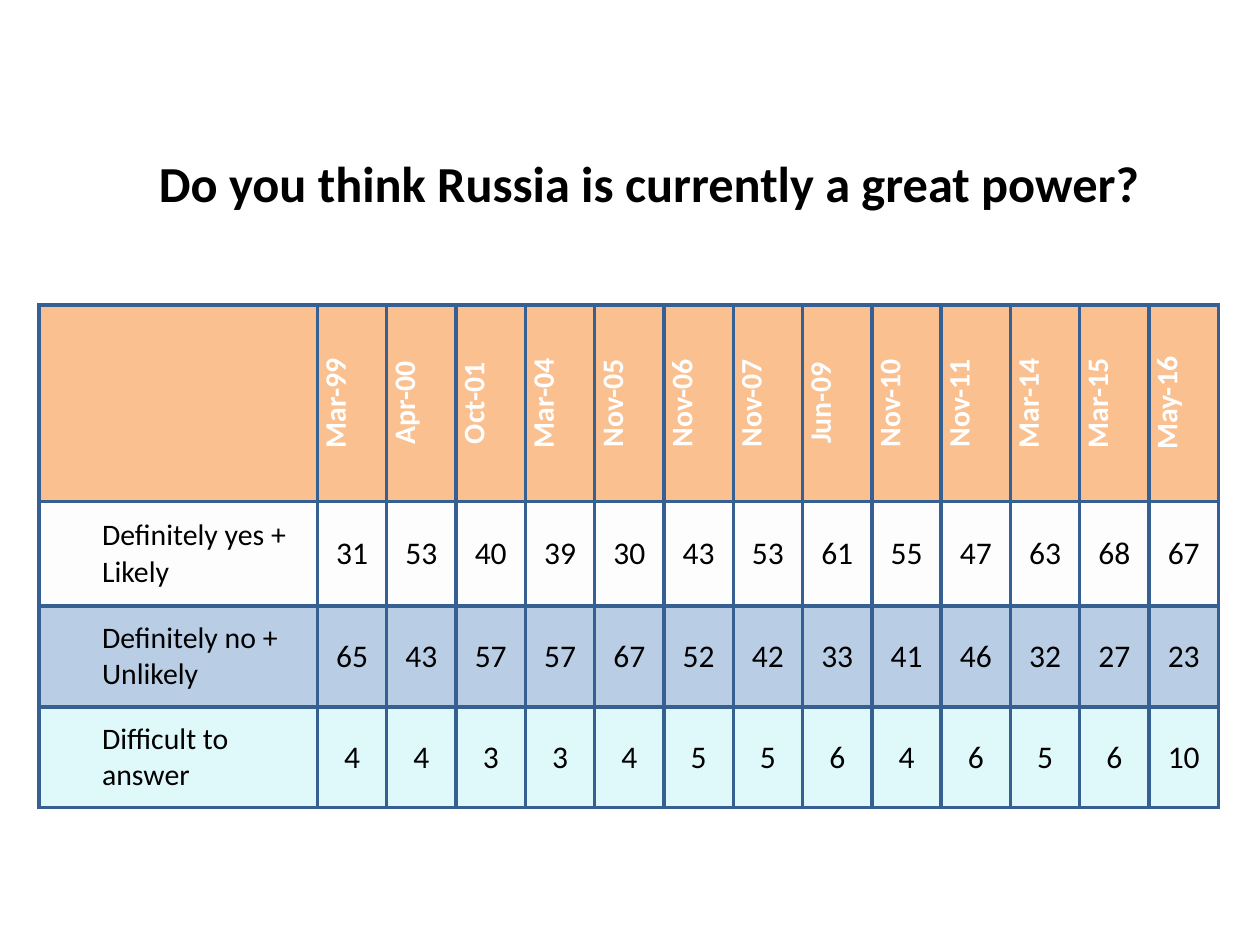
from dataclasses import dataclass

import pptx
import pptx.dml.color
import pptx.enum.text
import pptx.oxml
import pptx.oxml.ns
import pptx.util

Inches = pptx.util.Inches
Pt = pptx.util.Pt
ALIGN = pptx.enum.text.PP_ALIGN
ANCHOR = pptx.enum.text.MSO_ANCHOR
FONT = "Calibri"
BORDER = "376092"
HEADER_FILL = "FAC090"
LABEL_WIDTH = 2.21
DATE_WIDTH = 0.55
ROW_HEIGHTS = [1.56, 0.83, 0.8, 0.8]


@dataclass
class Answer:
    label: str
    fill: str
    values: list[int]


DATES = ["Mar-99", "Apr-00", "Oct-01", "Mar-04", "Nov-05", "Nov-06", "Nov-07",
         "Jun-09", "Nov-10", "Nov-11", "Mar-14", "Mar-15", "May-16"]
ANSWERS = [
    Answer("Definitely yes + Likely", "FEFDFD",
           [31, 53, 40, 39, 30, 43, 53, 61, 55, 47, 63, 68, 67]),
    Answer("Definitely no + Unlikely", "B9CDE5",
           [65, 43, 57, 57, 67, 52, 42, 33, 41, 46, 32, 27, 23]),
    Answer("Difficult to answer", "DFF8FA",
           [4, 4, 3, 3, 4, 5, 5, 6, 4, 6, 5, 6, 10]),
]


def rgb(color: str) -> pptx.dml.color.RGBColor:
    return pptx.dml.color.RGBColor.from_string(color)


def write(p, text: str, size: float, color: str, bold: bool, align) -> None:
    p.text = text
    p.alignment = align
    p.font.name = FONT
    p.font.size = Pt(size)
    p.font.bold = bold
    p.font.color.rgb = rgb(color)


def style_cell(cell, fill: str) -> None:
    tcPr = cell._tc.get_or_add_tcPr()
    for side in ("lnL", "lnR", "lnT", "lnB"):
        tcPr.append(pptx.oxml.parse_xml(
            f'<a:{side} {pptx.oxml.ns.nsdecls("a")} w="{Pt(2.25)}"><a:solidFill>'
            f'<a:srgbClr val="{BORDER}"/></a:solidFill></a:{side}>'))
    cell.fill.solid()
    cell.fill.fore_color.rgb = rgb(fill)
    cell.vertical_anchor = ANCHOR.MIDDLE
    cell.margin_left = cell.margin_right = 0
    cell.margin_top = cell.margin_bottom = 0


def add_title(slide, text: str) -> None:
    sp = slide.shapes.add_textbox(Inches(0.31), Inches(0.86), Inches(9.69), Inches(0.69))
    tf = sp.text_frame
    tf.word_wrap = True
    tf.vertical_anchor = ANCHOR.TOP
    tf.margin_top = Inches(0.35)
    tf.margin_bottom = 0
    write(tf.paragraphs[0], text, 28.8, "000000", True, ALIGN.CENTER)


def add_answer_table(slide) -> None:
    widths = [LABEL_WIDTH] + [DATE_WIDTH] * len(DATES)
    table = slide.shapes.add_table(
        len(ROW_HEIGHTS), len(widths), Inches(0.31), Inches(2.42),
        Inches(sum(widths)), Inches(sum(ROW_HEIGHTS))).table
    table.horz_banding = False
    for col, width in zip(table.columns, widths):
        col.width = Inches(width)
    for row, height in zip(table.rows, ROW_HEIGHTS):
        row.height = Inches(height)

    style_cell(table.cell(0, 0), HEADER_FILL)
    for c, date in enumerate(DATES, 1):
        cell = table.cell(0, c)
        style_cell(cell, HEADER_FILL)
        cell._tc.get_or_add_tcPr().set("vert", "vert270")
        write(cell.text_frame.paragraphs[0], date, 17, "FFFFFF", True, ALIGN.CENTER)

    for r, answer in enumerate(ANSWERS, 1):
        cell = table.cell(r, 0)
        style_cell(cell, answer.fill)
        p = cell.text_frame.paragraphs[0]
        write(p, answer.label, 17, "000000", False, ALIGN.LEFT)
        p.level = 1
        pPr = p._p.get_or_add_pPr()
        pPr.set("marL", str(Inches(0.5)))
        pPr.set("indent", "0")
        for c, value in enumerate(answer.values, 1):
            cell = table.cell(r, c)
            style_cell(cell, answer.fill)
            write(cell.text_frame.paragraphs[0], str(value), 18, "000000", False,
                  ALIGN.CENTER)


def main() -> None:
    prs = pptx.Presentation()
    prs.slide_width = Inches(10)
    prs.slide_height = Inches(7.5)
    s = prs.slides.add_slide(prs.slide_layouts[6])
    add_title(s, "Do you think Russia is currently a great power?")
    add_answer_table(s)
    prs.save("out.pptx")


if __name__ == "__main__":
    main()
